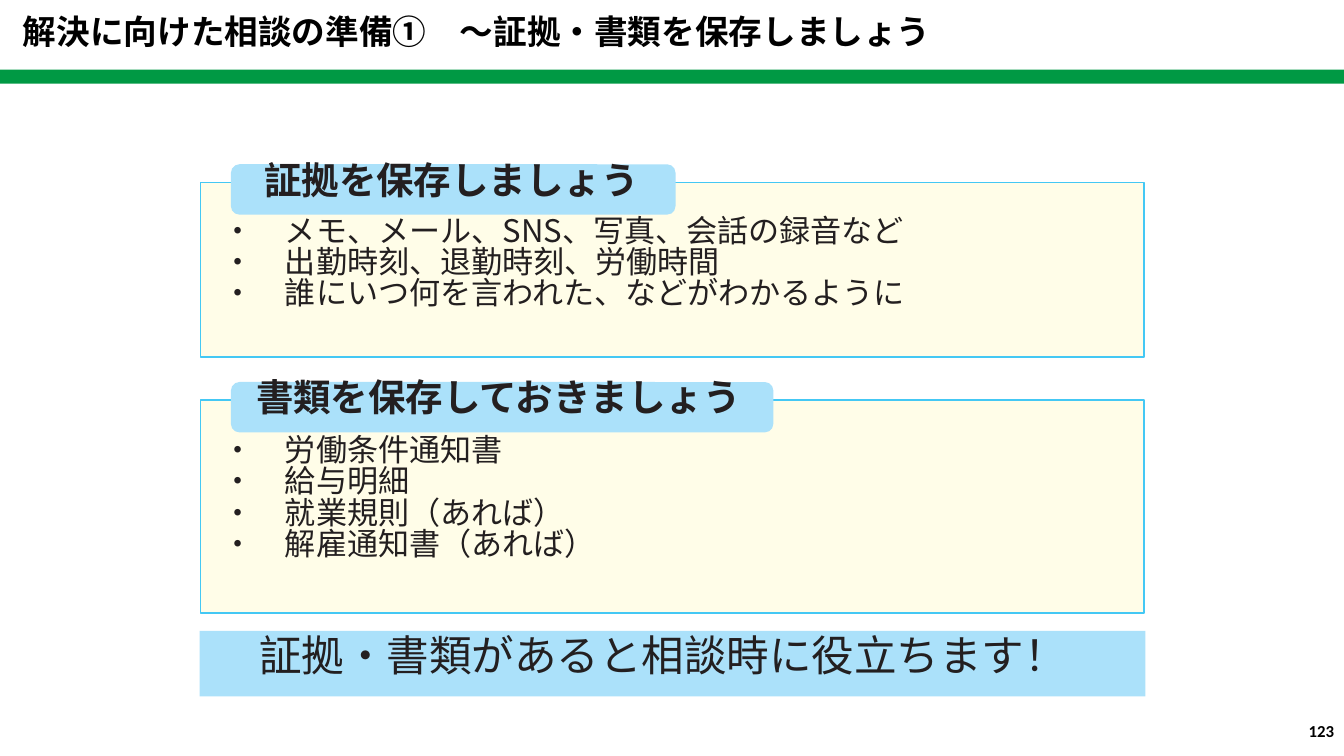
"""Build the slide on keeping evidence and documents before a consultation."""
from dataclasses import dataclass

from lxml.etree import SubElement
from pptx import Presentation
from pptx.dml.color import RGBColor as RGB
from pptx.enum.shapes import MSO_SHAPE as SHAPE
from pptx.enum.text import MSO_ANCHOR as ANCHOR, PP_ALIGN as ALIGN
from pptx.oxml.ns import qn
from pptx.util import Inches, Pt

TITLE = "解決に向けた相談の準備①　～証拠・書類を保存しましょう"
PANELS = [
    dict(heading="証拠を保存しましょう", tab_width=4.41, indent=0.42,
         top=1.81, height=1.73, gap=11.2,
         items=["メモ、メール、SNS、写真、会話の録音など",
                "出勤時刻、退勤時刻、労働時間",
                "誰にいつ何を言われた、などがわかるように"]),
    dict(heading="書類を保存しておきましょう", tab_width=5.38, indent=0.34,
         top=3.97, height=2.11, gap=12.4,
         items=["労働条件通知書", "給与明細", "就業規則（あれば）", "解雇通知書（あれば）"]),
]
MESSAGE = "証拠・書類があると相談時に役立ちます！"
PAGE = "123"


@dataclass(frozen=True)
class Theme:
    """Colours, fonts and type sizes."""
    green: str = "009944"
    blue: str = "ABE1FA"
    cream: str = "FFFDE8"
    border: str = "44C8F4"
    ink: str = "231F20"
    black: str = "000000"
    font: str = "Noto Sans CJK JP"
    number_font: str = "Calibri"
    title: float = 24
    heading: float = 26.8
    item: float = 22.2
    message: float = 30.4
    page: float = 12
    leading: float = 0.83


T = Theme()
WIDTH, HEIGHT = 13.33, 7.5
PANEL_LEFT, PANEL_WIDTH = 1.99, 9.36
TAB_LEFT, TAB_HEIGHT, TAB_RISE = 2.29, 0.5, 0.18
TEXT_LEFT, TEXT_WIDTH, TEXT_RISE = 2.2, 7.6, 0.38


def add_box(slide, kind, left, top, width, height, fill, line=None):
    """Add a flat filled shape."""
    sp = slide.shapes.add_shape(kind, *map(Inches, (left, top, width, height)))
    sp.shadow.inherit = False
    sp.fill.solid()
    sp.fill.fore_color.rgb = RGB.from_string(fill)
    if line:
        sp.line.color.rgb = RGB.from_string(line)
        sp.line.width = Pt(1.25)
    else:
        sp.line.fill.background()
    return sp


def add_text(slide, left, top, width, height, insets=(0.1, 0.05, 0.1, 0.05)):
    """Add a wrapping text box and return its frame."""
    sp = slide.shapes.add_textbox(*map(Inches, (left, top, width, height)))
    return set_frame(sp.text_frame, insets)


def set_frame(tf, insets):
    """Set wrapping, anchor and insets of a text frame."""
    tf.word_wrap = True
    tf.vertical_anchor = ANCHOR.TOP
    tf.margin_left, tf.margin_top, tf.margin_right, tf.margin_bottom = map(Inches, insets)
    return tf


def write(p, text, size, color=T.ink, bold=False, font=T.font,
          indent=0, before=0, align=ALIGN.LEFT, leading=T.leading):
    """Fill one paragraph and format it."""
    p.text = text
    p.alignment = align
    p.line_spacing = leading
    p.space_before = Pt(before)
    p._p.get_or_add_pPr().set("marL", str(Inches(indent)))
    for r in p.runs:
        r.font.size = Pt(size)
        r.font.bold = bold
        r.font.name = font
        r.font.color.rgb = RGB.from_string(color)
        SubElement(r._r.get_or_add_rPr(), qn("a:ea")).set("typeface", font)


def add_panel(slide, heading, tab_width, indent, top, height, gap, items):
    """Add a bordered panel with its tab, heading and items."""
    add_box(slide, SHAPE.RECTANGLE, PANEL_LEFT, top, PANEL_WIDTH, height, T.cream, T.border)
    tab = add_box(slide, SHAPE.ROUNDED_RECTANGLE, TAB_LEFT, top - TAB_RISE,
                  tab_width, TAB_HEIGHT, T.blue)
    tab.adjustments[0] = 0.17
    tf = add_text(slide, TEXT_LEFT, top - TEXT_RISE, TEXT_WIDTH, height + 0.2, (0, 0.2, 0, 0))
    write(tf.paragraphs[0], heading, T.heading, bold=True, indent=indent)
    for i, item in enumerate(items):
        write(tf.add_paragraph(), f"・　{item}", T.item, indent=0.01,
              before=0.3 if i else gap)


def main():
    """Lay out the slide and save it."""
    prs = Presentation()
    prs.slide_width, prs.slide_height = Inches(WIDTH), Inches(HEIGHT)
    slide = prs.slides.add_slide(prs.slide_layouts[6])

    add_box(slide, SHAPE.RECTANGLE, 0, 0.69, WIDTH, 0.14, T.green)
    tf = add_text(slide, 0.13, 0.13, 9.84, 0.5)
    write(tf.paragraphs[0], TITLE, T.title, T.black, bold=True)

    for panel in PANELS:
        add_panel(slide, **panel)

    banner = add_box(slide, SHAPE.RECTANGLE, 1.98, 6.26, 9.38, 0.65, T.blue)
    tf = set_frame(banner.text_frame, (0, 0.07, 0, 0.07))
    write(tf.paragraphs[0], MESSAGE, T.message, indent=0.59)

    tf = add_text(slide, 10.22, 7.1, 3.11, 0.4)
    write(tf.paragraphs[0], PAGE, T.page, T.black, bold=True, font=T.number_font,
          align=ALIGN.RIGHT, leading=1)
    prs.save("out.pptx")


if __name__ == "__main__":
    main()
